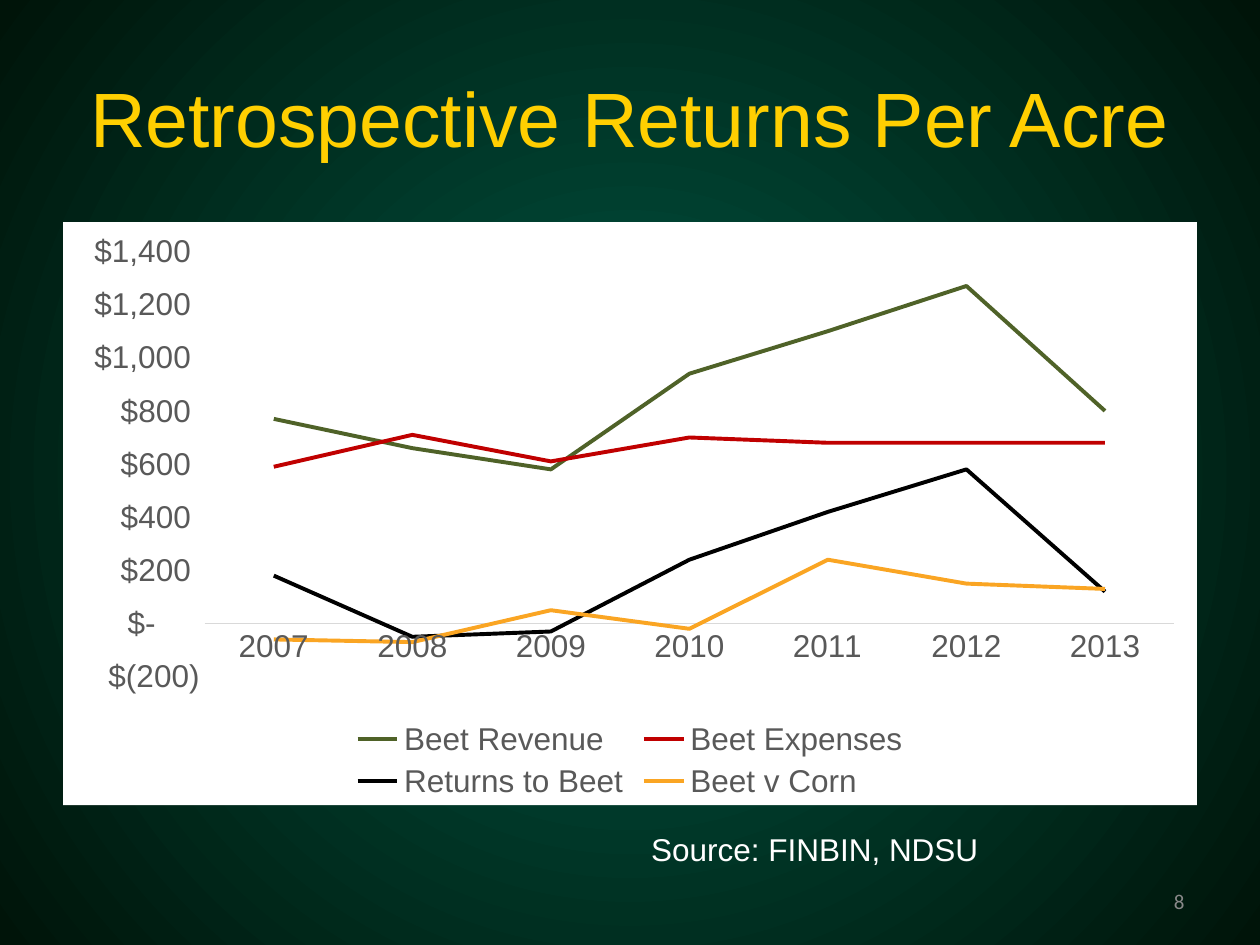
from dataclasses import dataclass

from lxml import etree
from pptx import Presentation
from pptx.chart.data import CategoryChartData
from pptx.dml.color import RGBColor
from pptx.enum.chart import XL_CHART_TYPE, XL_LEGEND_POSITION, XL_TICK_MARK
from pptx.enum.text import MSO_ANCHOR, PP_ALIGN
from pptx.oxml import parse_xml
from pptx.oxml.ns import nsdecls, qn
from pptx.util import Inches, Pt

LINE = XL_CHART_TYPE.LINE
BOTTOM = XL_LEGEND_POSITION.BOTTOM
NO_TICK = XL_TICK_MARK.NONE
LEFT, CENTER, RIGHT = PP_ALIGN.LEFT, PP_ALIGN.CENTER, PP_ALIGN.RIGHT
TOP, MIDDLE = MSO_ANCHOR.TOP, MSO_ANCHOR.MIDDLE

WIDTH, HEIGHT = Inches(10), Inches(7.5)
DOLLARS = '_("$"* #,##0_);_("$"* \\(#,##0\\);_("$"* "-"??_);_(@_)'
YEARS = [str(year) for year in range(2007, 2014)]
SERIES = [
    ("Beet Revenue", "4F6228", [770, 660, 580, 940, 1100, 1270, 800]),
    ("Beet Expenses", "C00000", [590, 710, 610, 700, 680, 680, 680]),
    ("Returns to Beet", "000000", [180, -50, -30, 240, 420, 580, 120]),
    ("Beet v Corn", "FAA523", [-60, -70, 50, -20, 240, 150, 130]),
]


@dataclass(frozen=True)
class Theme:
    font: str = "Arial"
    number_font: str = "Calibri"
    title: str = "FFCF01"
    text: str = "FFFFFF"
    muted: str = "898989"
    chart_text: str = "595959"
    axis: str = "D9D9D9"
    panel: str = "FFFFFF"
    glow: str = "005643"
    edge: str = "001409"
    title_size: int = 44
    body_size: int = 18
    number_size: int = 12


def style_font(font, name, size, color):
    font.name = name
    font.size = Pt(size)
    font.color.rgb = RGBColor.from_string(color)


def write_text(frame, text, *, font, size, color, align=LEFT, anchor=TOP):
    frame.word_wrap = True
    frame.vertical_anchor = anchor
    paragraph = frame.paragraphs[0]
    paragraph.alignment = align
    run = paragraph.add_run()
    run.text = text
    style_font(run.font, font, size, color)


class SlideBuilder:
    """Places elements by (left, top, width, height) shares of the slide."""

    def __init__(self, slide, theme):
        self.slide = slide
        self.theme = theme

    def box(self, left, top, width, height):
        return (int(left * WIDTH), int(top * HEIGHT),
                int(width * WIDTH), int(height * HEIGHT))

    def background(self):
        """Radial gradient, glowing from the centre."""
        fill = self.slide.background.fill
        fill.gradient()
        for stop, color, position in zip(
                fill.gradient_stops, (self.theme.glow, self.theme.edge), (0, 1)):
            stop.color.rgb = RGBColor.from_string(color)
            stop.position = position
        gradient = self.slide.element.find(".//" + qn("a:gradFill"))
        gradient.remove(gradient.find(qn("a:lin")))
        circle = etree.SubElement(gradient, qn("a:path"), {"path": "circle"})
        sides = dict.fromkeys("ltrb", "50000")
        etree.SubElement(circle, qn("a:fillToRect"), sides)

    def text(self, text, place, **style):
        shape = self.slide.shapes.add_textbox(*self.box(*place))
        write_text(shape.text_frame, text, **style)

    def line_chart(self, categories, series_list, place):
        theme = self.theme
        data = CategoryChartData(number_format=DOLLARS)
        data.categories = categories
        for name, _, values in series_list:
            data.add_series(name, values)
        chart = self.slide.shapes.add_chart(LINE, *self.box(*place), data).chart
        chart.has_title = False
        style_font(chart.font, theme.font, theme.body_size, theme.chart_text)
        self.fill_chart(chart)

        plot = chart.plots[0]
        plot.vary_by_categories = False
        for series, (_, color, _) in zip(plot.series, series_list):
            series.smooth = False
            series.format.line.color.rgb = RGBColor.from_string(color)
            series.format.line.width = Pt(2.25)

        for axis in (chart.category_axis, chart.value_axis):
            axis.major_tick_mark = axis.minor_tick_mark = NO_TICK
            axis.has_major_gridlines = False
            style_font(axis.tick_labels.font, theme.font, theme.body_size,
                       theme.chart_text)
        axis_line = chart.category_axis.format.line
        axis_line.color.rgb = RGBColor.from_string(theme.axis)
        axis_line.width = Pt(0.75)
        chart.value_axis.format.line.fill.background()
        chart.value_axis.tick_labels.number_format = DOLLARS
        chart.value_axis.tick_labels.number_format_is_linked = False

        chart.has_legend = True
        chart.legend.position = BOTTOM
        chart.legend.include_in_layout = False
        style_font(chart.legend.font, theme.font, theme.body_size,
                   theme.chart_text)

    def fill_chart(self, chart):
        properties = parse_xml(
            f'<c:spPr {nsdecls("c", "a")}><a:solidFill>'
            f'<a:srgbClr val="{self.theme.panel}"/></a:solidFill>'
            '<a:ln><a:noFill/></a:ln></c:spPr>')
        chart.element.find(qn("c:txPr")).addprevious(properties)


def main():
    presentation = Presentation()
    presentation.slide_width, presentation.slide_height = WIDTH, HEIGHT
    theme = Theme()
    slide = presentation.slides.add_slide(presentation.slide_layouts[6])
    builder = SlideBuilder(slide, theme)

    builder.background()
    builder.text("Retrospective Returns Per Acre", (0.05, 0.04, 0.9, 0.167),
                 font=theme.font, size=theme.title_size, color=theme.title,
                 align=CENTER, anchor=MIDDLE)
    builder.text("8", (0.717, 0.927, 0.233, 0.053),
                 font=theme.number_font, size=theme.number_size,
                 color=theme.muted, align=RIGHT, anchor=MIDDLE)
    builder.line_chart(YEARS, SERIES, (0.05, 0.235, 0.9, 0.617))
    builder.text("Source: FINBIN, NDSU", (0.507, 0.872, 0.306, 0.055),
                 font=theme.font, size=theme.body_size, color=theme.text)
    presentation.save("out.pptx")


if __name__ == "__main__":
    main()
